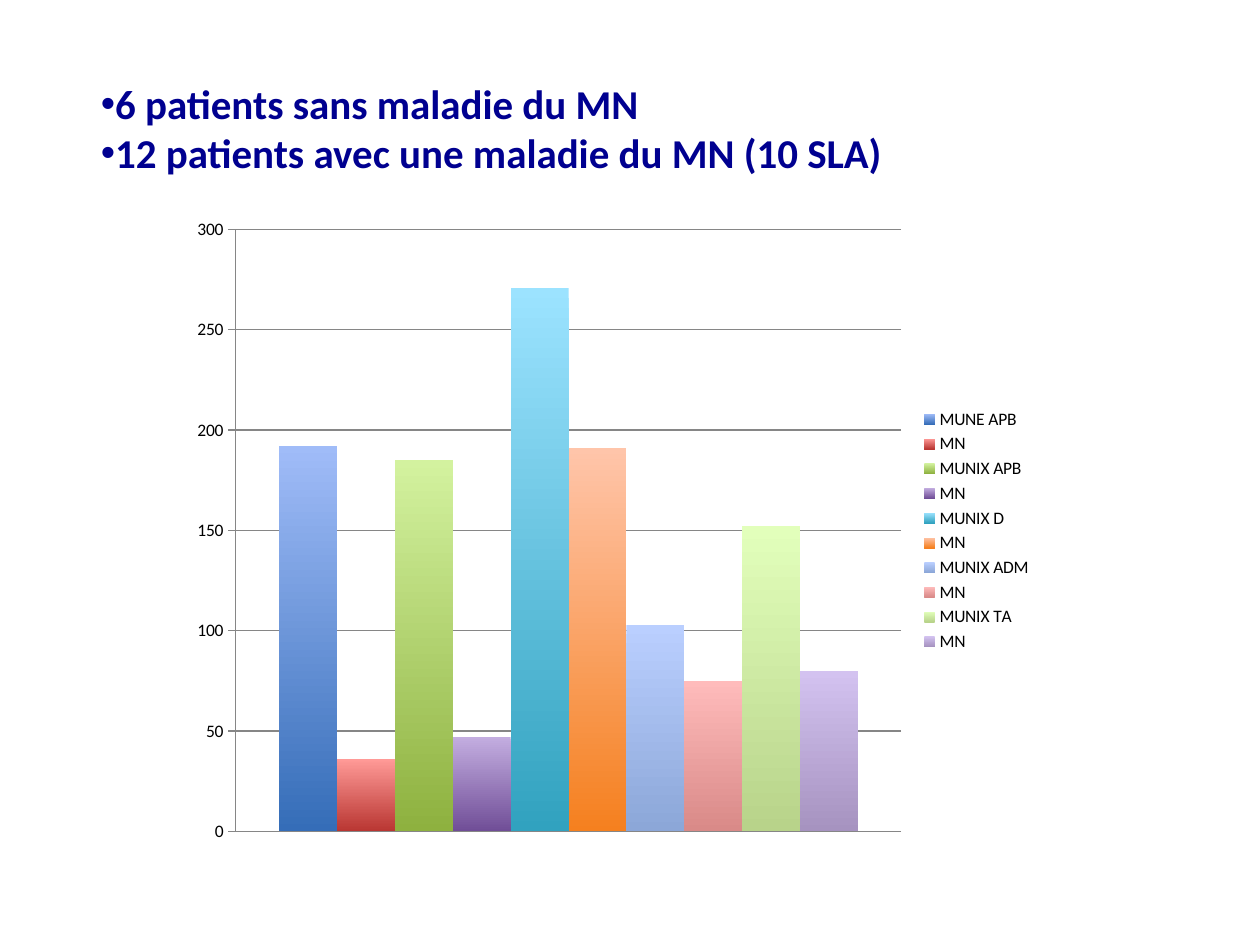
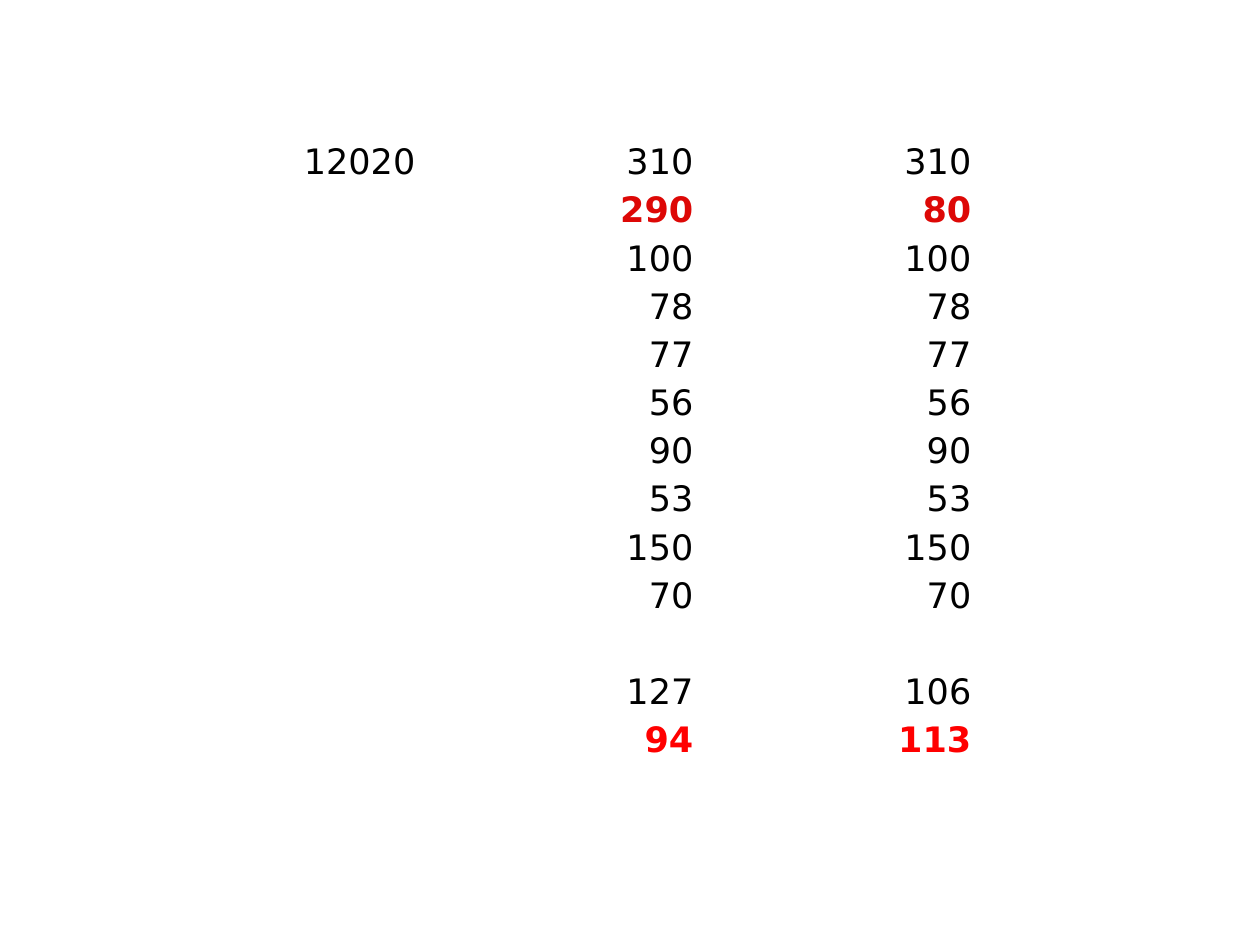
from collections import namedtuple
from dataclasses import dataclass

from lxml import etree
from pptx import Presentation
from pptx import util as u
from pptx.chart.data import CategoryChartData
from pptx.dml.color import RGBColor
from pptx.enum import chart as charts, text
from pptx.oxml.ns import qn

Box = namedtuple("Box", "left top width height")


@dataclass(frozen=True)
class Theme:
    heading_font: str = "Calibri"
    table_font: str = "DejaVu Sans"
    heading_size: float = 23.4
    chart_size: float = 10
    table_size: float = 20
    navy: str = "000090"
    ink: str = "000000"
    grid: str = "868686"
    dark_red: str = "DD0806"
    red: str = "FF0000"


THEME = Theme()

# Name, value, top colour and bottom colour of each bar
BARS = [
    ("MUNE APB", 192, "A0BCF8", "356DB8"),
    ("MN", 36, "FF9A97", "B93632"),
    ("MUNIX APB", 185, "D3F29F", "8EB13F"),
    ("MN", 47, "C3ADE0", "704E97"),
    ("MUNIX D", 271, "9CE3FF", "31A2BF"),
    ("MN", 191, "FFC5AA", "F5801F"),
    ("MUNIX ADM", 103, "BACFFF", "8CA7D8"),
    ("MN", 75, "FFBBBB", "D98A88"),
    ("MUNIX TA", 152, "E2FFBB", "B8D38A"),
    ("MN", 80, "D3C2F0", "A693C0"),
]

MEASURES = [
    ("12020", "310", "310"),
    ("", "290", "80"),
    ("", "100", "100"),
    ("", "78", "78"),
    ("", "77", "77"),
    ("", "56", "56"),
    ("", "90", "90"),
    ("", "53", "53"),
    ("", "150", "150"),
    ("", "70", "70"),
    ("", "", ""),
    ("", "127", "106"),
    ("", "94", "113"),
]
ROW_HIGHLIGHTS = {1: THEME.dark_red, 12: THEME.red}


def inches(box):
    return [u.Inches(length) for length in box]


def style_font(font, name, size, color, bold=False):
    font.name = name
    font.size = u.Pt(size)
    font.bold = bold
    font.color.rgb = RGBColor.from_string(color)


def add_bullet(para, indent):
    """Bullet on an indented first line, with a tab stop at the indent."""
    props = para._p.get_or_add_pPr()
    props.set("marL", "0")
    props.set("indent", str(indent))
    etree.SubElement(props, qn("a:buFont"), typeface="Arial")
    etree.SubElement(props, qn("a:buChar"), char="•")
    tabs = etree.SubElement(props, qn("a:tabLst"))
    etree.SubElement(tabs, qn("a:tab"), pos=str(indent), algn="l")


def fill_heading(page, box, lines):
    title = page.shapes.title
    title.left, title.top, title.width, title.height = inches(box)
    frame = title.text_frame
    frame.text = "\n".join(lines)
    frame.word_wrap = True
    frame.auto_size = text.MSO_AUTO_SIZE.NONE
    frame.vertical_anchor = text.MSO_ANCHOR.MIDDLE
    for para in frame.paragraphs:
        para.alignment = text.PP_ALIGN.LEFT
        add_bullet(para, u.Inches(0.2))
        for span in para.runs:
            style_font(span.font, THEME.heading_font, THEME.heading_size,
                       THEME.navy, bold=True)


def add_bar_chart(page, box, bars):
    data = CategoryChartData()
    data.categories = ["1"]
    for name, value, _, _ in bars:
        data.add_series(name, [value])
    chart = page.shapes.add_chart(
        charts.XL_CHART_TYPE.COLUMN_CLUSTERED, *inches(box), data).chart
    style_font(chart.font, THEME.heading_font, THEME.chart_size, THEME.ink)
    chart.has_title = False
    chart.has_legend = True
    chart.legend.position = charts.XL_LEGEND_POSITION.RIGHT
    chart.legend.include_in_layout = False

    # Axes
    chart.category_axis.visible = False
    axis = chart.value_axis
    axis.minimum_scale, axis.maximum_scale, axis.major_unit = 0, 300, 50
    axis.major_tick_mark = charts.XL_TICK_MARK.CROSS
    axis.has_major_gridlines = True
    for line in (axis.format.line, axis.major_gridlines.format.line):
        line.color.rgb = RGBColor.from_string(THEME.grid)
        line.width = u.Pt(0.75)

    # Bars shaded from top to bottom
    plot = chart.plots[0]
    plot.gap_width, plot.overlap = 150, 0
    plot.vary_by_categories = False
    for series, (_, _, *shades) in zip(plot.series, bars):
        series.invert_if_negative = False
        fill = series.format.fill
        fill.gradient()
        fill.gradient_angle = 270
        for stop, shade in zip(fill.gradient_stops, shades):
            stop.color.rgb = RGBColor.from_string(shade)


def add_measures_table(page, box, rows, highlights):
    table = page.shapes.add_table(len(rows), len(rows[0]), *inches(box)).table
    table.first_row = table.horz_banding = False
    for row_index, values in enumerate(rows):
        color = highlights.get(row_index, THEME.ink)
        for column_index, value in enumerate(values):
            cell = table.cell(row_index, column_index)
            cell.fill.background()
            cell.vertical_anchor = text.MSO_ANCHOR.BOTTOM
            cell.margin_left = cell.margin_right = cell.margin_top = u.Inches(0.01)
            cell.margin_bottom = 0
            cell.text_frame.text = value
            para = cell.text_frame.paragraphs[0]
            para.alignment = text.PP_ALIGN.RIGHT
            # Empty cells take the paragraph font, so rows stay equal
            for part in para.runs or [para]:
                style_font(part.font, THEME.table_font, THEME.table_size,
                           color, bold=row_index in highlights)


def build_chart_page(deck):
    page = deck.slides.add_slide(deck.slide_layouts.get_by_name("Title Only"))
    fill_heading(page, Box(0.5, 0.39, 9, 1.25), [
        "6 patients sans maladie du MN",
        "12 patients avec une maladie du MN (10 SLA)",
    ])
    add_bar_chart(page, Box(1.43, 1.64, 6.86, 5.14), BARS)


def build_table_page(deck):
    page = deck.slides.add_slide(deck.slide_layouts.get_by_name("Blank"))
    add_measures_table(page, Box(1.1, 1.07, 6.62, 4.97), MEASURES, ROW_HIGHLIGHTS)


def main():
    deck = Presentation()
    deck.slide_width, deck.slide_height = u.Inches(10), u.Inches(7.5)
    build_chart_page(deck)
    build_table_page(deck)
    deck.save("out.pptx")


if __name__ == "__main__":
    main()
